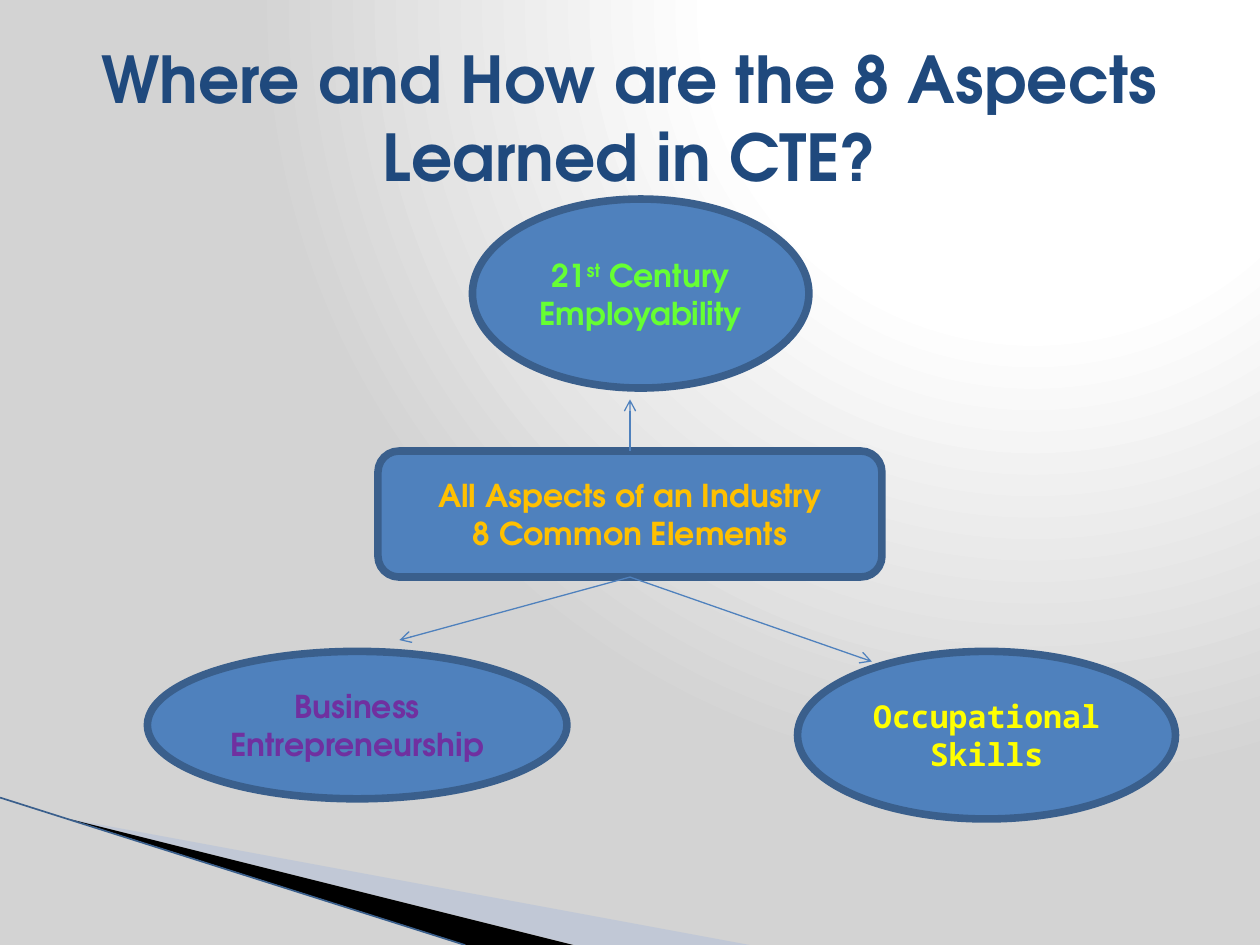
from dataclasses import dataclass

from lxml import etree
from pptx import Presentation
from pptx.dml.color import RGBColor
from pptx.enum import shapes, text
from pptx.oxml import parse_xml
from pptx.oxml.ns import nsdecls, qn
from pptx.util import Inches, Pt


@dataclass(frozen=True)
class Theme:
    font: str = "TeX Gyre Adventor"
    mono: str = "Noto Sans Mono"
    title: str = "1F497D"
    fill: str = "4F81BD"
    outline: str = "3A5F8C"
    wedge: str = "A7B9DB"
    center_text: str = "FFC000"
    employ_text: str = "66FF33"
    business_text: str = "7030A0"
    skills_text: str = "FFFF00"
    title_size: float = 36.9
    body_size: float = 18
    border: float = 4.33
    arrow: float = 0.75


T = Theme()
RECT = shapes.MSO_SHAPE.ROUNDED_RECTANGLE
OVAL = shapes.MSO_SHAPE.OVAL


def rgb(value):
    return RGBColor.from_string(value)


def add_background(s):
    """Radial glow from the upper right, white fading to grey."""
    s.background.fill.solid()
    bg = s.element.find(".//" + qn("p:bgPr"))
    stops = "".join(
        f'<a:gs pos="{pos}000"><a:srgbClr val="{color}"/></a:gs>'
        for pos, color in ((0, "FFFFFF"), (40, "FFFFFF"), (100, "D3D3D3")))
    bg.replace(bg[0], parse_xml(
        f'<a:gradFill {nsdecls("a")} rotWithShape="1"><a:gsLst>{stops}</a:gsLst>'
        '<a:path path="circle"><a:fillToRect l="65000" b="98000"/></a:path>'
        '</a:gradFill>'))


def add_wedge(s, points, color, alpha=100):
    points = [(Inches(x), Inches(y)) for x, y in points]
    builder = s.shapes.build_freeform(*points[0])
    builder.add_line_segments(points[1:], close=True)
    sp = builder.convert_to_shape()
    sp.shadow.inherit = False
    sp.fill.solid()
    sp.fill.fore_color.rgb = rgb(color)
    sp.line.fill.background()
    clr = sp.element.spPr.find(".//" + qn("a:srgbClr"))
    etree.SubElement(clr, qn("a:alpha"), val=str(alpha * 1000))


def add_line(s, start, end, color, width, arrow=False):
    line = s.shapes.add_connector(
        shapes.MSO_CONNECTOR.STRAIGHT, *map(Inches, start + end))
    line.line.color.rgb = rgb(color)
    line.line.width = Pt(width)
    if arrow:
        etree.SubElement(line.line._get_or_add_ln(), qn("a:tailEnd"), type="arrow")
    etree.SubElement(line.element.spPr, qn("a:effectLst"))


def add_corner(s, left, top, bottom):
    """Swoosh in the lower left corner."""
    tip = (left + 0.55, top + 0.17)
    add_wedge(s, [tip, (left + 5.95, bottom), (left + 4.56, bottom)], T.wedge, 40)
    add_wedge(s, [tip, (left + 4.55, bottom), (left + 3.7, bottom)], "000000")
    add_line(s, (left, top), (left + 3.69, bottom), T.outline, 0.95)


def write(sp, paragraphs, size, color, font):
    """Fill a shape with centred paragraphs, each a list of (text, baseline) runs."""
    tf = sp.text_frame
    tf.word_wrap = True
    tf.vertical_anchor = text.MSO_ANCHOR.MIDDLE
    for i, runs in enumerate(paragraphs):
        p = tf.add_paragraph() if i else tf.paragraphs[0]
        p.alignment = text.PP_ALIGN.CENTER
        p.font.name, p.font.size, p.font.bold = font, Pt(size), True
        p.font.color.rgb = rgb(color)
        for words, baseline in runs:
            r = p.add_run()
            r.text = words
            if baseline:
                r.font._element.set("baseline", str(baseline * 1000))


def add_title(s, box, words):
    sp = s.shapes.add_textbox(*map(Inches, box))
    write(sp, [[(words, 0)]], T.title_size, T.title, T.font)


def add_node(s, kind, box, paragraphs, color, font=T.font):
    sp = s.shapes.add_shape(kind, *map(Inches, box))
    sp.shadow.inherit = False
    sp.fill.solid()
    sp.fill.fore_color.rgb = rgb(T.fill)
    sp.line.color.rgb = rgb(T.outline)
    sp.line.width = Pt(T.border)
    write(sp, paragraphs, T.body_size, color, font)


def add_diagram(s, left, top):
    """Central box with arrows out to three ovals."""
    add_node(s, RECT, (left + 1.83, top + 2, 4, 1),
             [[("All Aspects of an Industry", 0)], [("8 Common Elements", 0)]],
             T.center_text)
    add_node(s, OVAL, (left + 2.58, top, 2.67, 1.5),
             [[("21", 0), ("st", 30), (" Century Employability", 0)]], T.employ_text)
    add_node(s, OVAL, (left, top + 3.59, 3.33, 1.17),
             [[("Business Entrepreneurship", 0)]], T.business_text)
    add_node(s, OVAL, (left + 5.16, top + 3.59, 3, 1.33),
             [[("Occupational Skills", 0)]], T.skills_text, T.mono)
    middle = left + 3.83
    for y, end in ((2, (middle, top + 1.59)),
                   (3, (left + 2, top + 3.5)),
                   (3, (left + 5.75, top + 3.67))):
        add_line(s, (middle, top + y), end, T.fill, T.arrow, arrow=True)


def main():
    prs = Presentation()
    prs.slide_width, prs.slide_height = Inches(10), Inches(7.5)
    s = prs.slides.add_slide(prs.slide_layouts[6])
    add_background(s)
    add_corner(s, 0, 6.33, 7.5)
    add_title(s, (0.5, 0.3, 9, 1.25), "Where and How are the 8 Aspects Learned in CTE?")
    add_diagram(s, 1.17, 1.58)
    prs.save("out.pptx")


if __name__ == "__main__":
    main()
